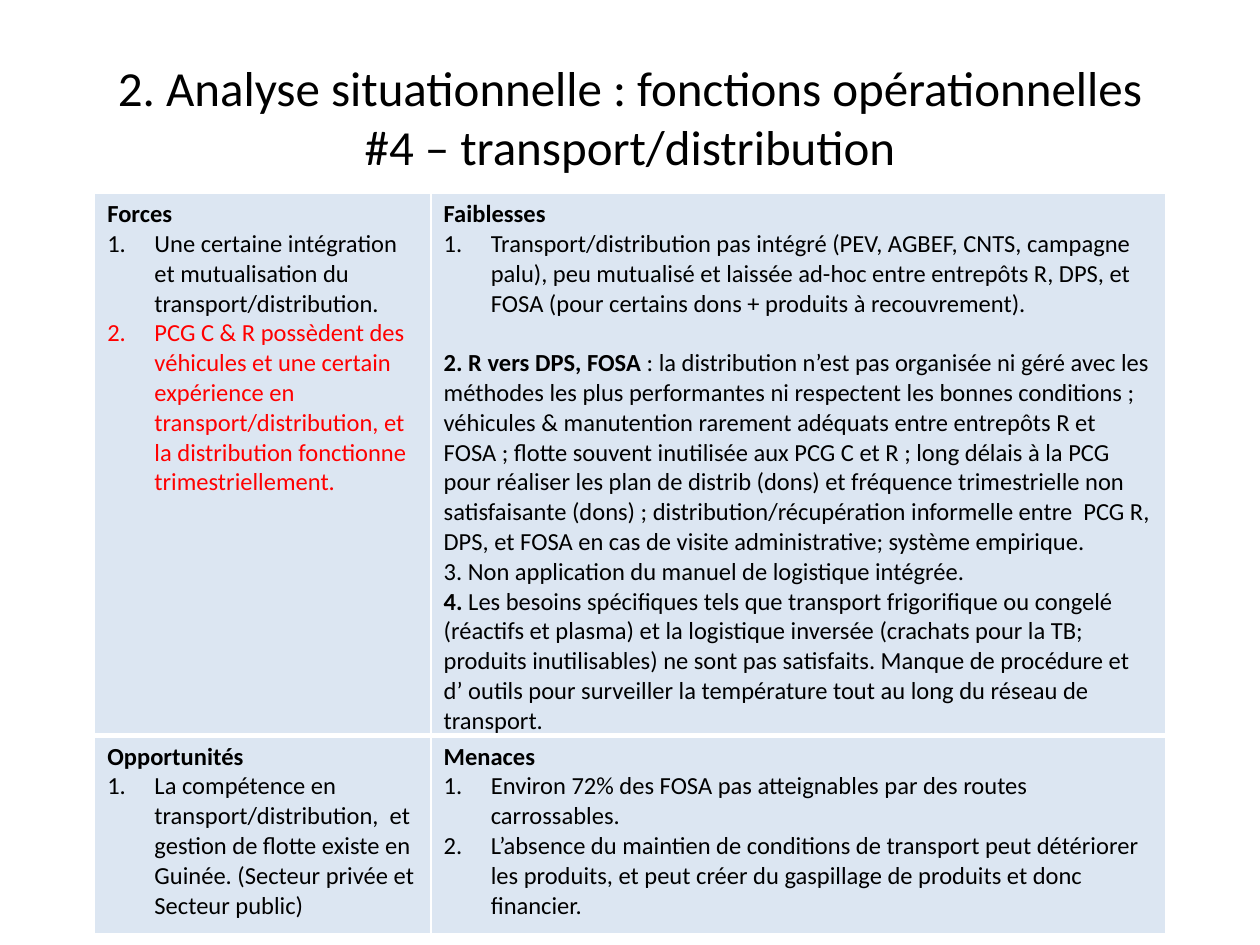
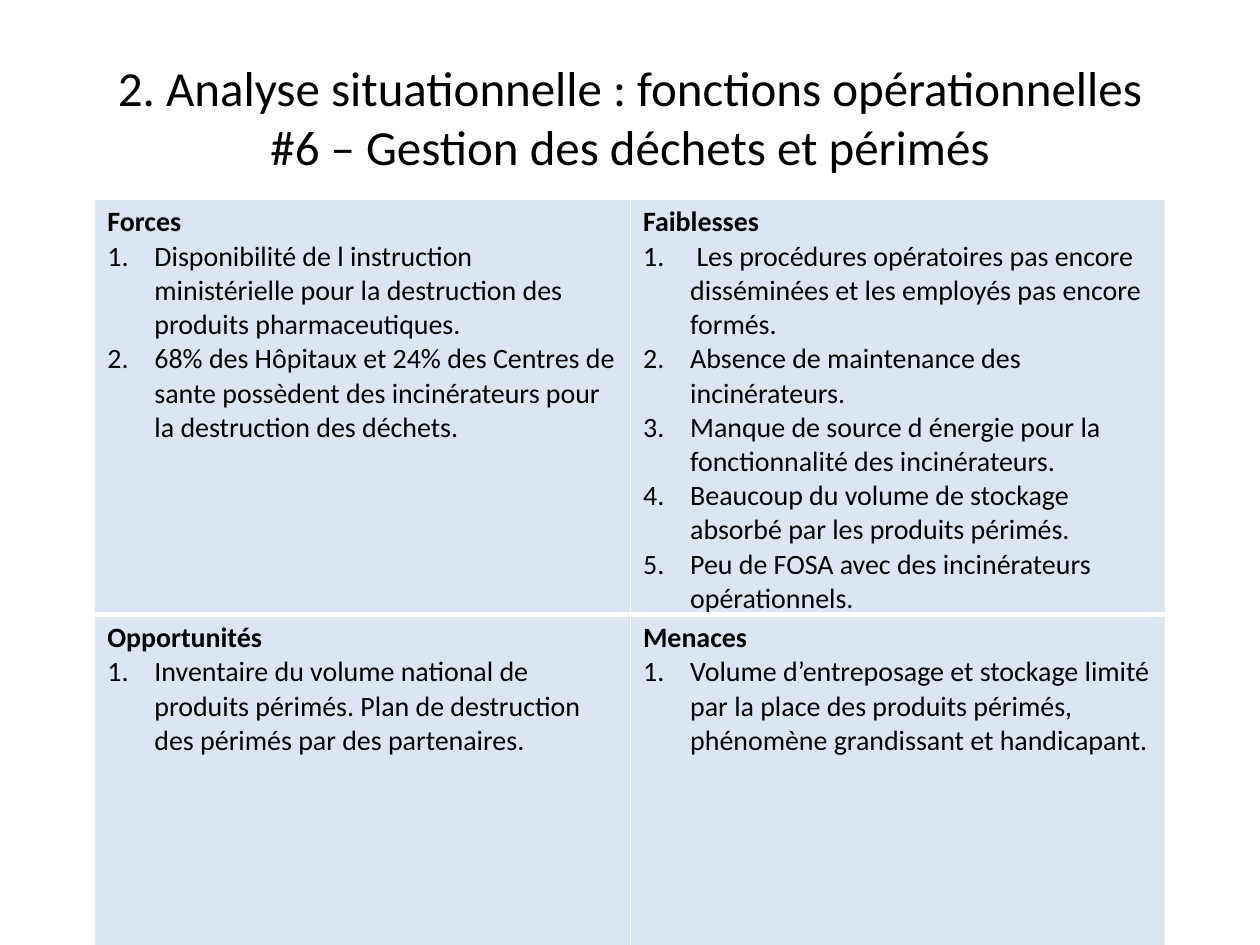
from dataclasses import dataclass

from lxml.etree import SubElement
from pptx import Presentation
from pptx.dml.color import RGBColor as Rgb
from pptx.enum.text import MSO_ANCHOR as Anchor, PP_ALIGN as Align
from pptx.oxml.ns import qn
from pptx.util import Cm, Pt


@dataclass(frozen=True)
class Theme:
    font: str = "Calibri"
    title: int = 28
    ink: str = "000000"
    alert: str = "FF0000"
    panel: str = "DCE6F2"
    rule: str = "FFFFFF"
    thin: int = 1
    thick: int = 3


@dataclass(frozen=True)
class Item:
    text: str
    lead: str = ""
    num: bool = True
    color: str = ""
    gap: float = 0


@dataclass(frozen=True)
class Panel:
    head: str
    items: list[Item]


@dataclass(frozen=True)
class Swot:
    topic: str
    top: float
    size: int
    cols: list[float]
    rows: list[float]
    panels: list[list[Panel]]


THEME = Theme()
PREFIX = "2. Analyse situationnelle : fonctions opérationnelles"
LEFT = 1.91
INDENT = Cm(0.95)

SWOTS = [
    Swot("#4 – transport/distribution", 3.89, 14, [6.78, 14.81], [9.12, 3.99], [
        [
            Panel("Forces", [
                Item("Une certaine intégration et mutualisation du transport/distribution."),
                Item("PCG C & R possèdent des  véhicules et une certain expérience en "
                     "transport/distribution, et la distribution fonctionne "
                     "trimestriellement.", color=THEME.alert),
            ]),
            Panel("Faiblesses", [
                Item("Transport/distribution pas intégré (PEV, AGBEF, CNTS, campagne palu), "
                     "peu mutualisé et laissée ad-hoc entre entrepôts R, DPS, et FOSA "
                     "(pour certains dons + produits à recouvrement)."),
                Item(": la distribution n’est pas organisée ni géré avec les méthodes les "
                     "plus performantes ni respectent les bonnes conditions ; véhicules & "
                     "manutention rarement adéquats entre entrepôts R et FOSA ; flotte "
                     "souvent inutilisée aux PCG C et R ; long délais à la PCG pour réaliser "
                     "les plan de distrib (dons) et fréquence trimestrielle non satisfaisante "
                     "(dons) ; distribution/récupération informelle entre  PCG R, DPS, et "
                     "FOSA en cas de visite administrative; système empirique.",
                     lead="2. R vers DPS, FOSA ", num=False, gap=17),
                Item("3. Non application du manuel de logistique intégrée.", num=False),
                Item("Les besoins spécifiques tels que transport frigorifique ou congelé "
                     "(réactifs et plasma) et la logistique inversée (crachats pour la TB; "
                     "produits inutilisables) ne sont pas satisfaits. Manque de procédure "
                     "et d’ outils pour surveiller la température tout au long du réseau "
                     "de transport.", lead="4. ", num=False),
            ]),
        ],
        [
            Panel("Opportunités", [
                Item("La compétence en transport/distribution,  et gestion de flotte existe "
                     "en Guinée. (Secteur privée et Secteur public)"),
            ]),
            Panel("Menaces", [
                Item("Environ 72% des FOSA pas atteignables par des routes carrossables."),
                Item("L’absence du maintien de conditions de transport peut détériorer les "
                     "produits, et peut créer du gaspillage de produits et donc financier."),
            ]),
        ],
    ]),
    Swot("#6 – Gestion des déchets et périmés", 4.01, 16, [10.8, 10.8], [6.88, 6.88], [
        [
            Panel("Forces", [
                Item("Disponibilité de l instruction ministérielle pour la destruction "
                     "des produits pharmaceutiques."),
                Item("68% des Hôpitaux et 24% des Centres de sante possèdent des "
                     "incinérateurs pour la destruction des déchets."),
            ]),
            Panel("Faiblesses", [
                Item(" Les procédures opératoires pas encore  disséminées et les employés "
                     "pas encore formés."),
                Item("Absence de maintenance des incinérateurs."),
                Item("Manque de source d énergie pour la fonctionnalité des incinérateurs."),
                Item("Beaucoup du volume de stockage absorbé par les produits périmés."),
                Item("Peu de FOSA avec des incinérateurs opérationnels."),
            ]),
        ],
        [
            Panel("Opportunités", [
                Item("Inventaire du volume national de produits périmés. Plan de "
                     "destruction des périmés par des partenaires."),
            ]),
            Panel("Menaces", [
                Item("Volume d’entreposage et stockage limité par la place des produits "
                     "périmés, phénomène grandissant et handicapant."),
            ]),
        ],
    ]),
]


def style(para, size: int, color: str = THEME.ink, bold: bool = False) -> None:
    font = para.font
    font.name, font.size, font.bold = THEME.font, Pt(size), bold
    font.color.rgb = Rgb.from_string(color)


def number(para) -> None:
    """Give the paragraph an automatic number and a hanging indent."""
    props = para._p.get_or_add_pPr()
    props.set("marL", str(INDENT))
    props.set("indent", str(-INDENT))
    SubElement(props, qn("a:buFont"), typeface="+mj-lt")
    SubElement(props, qn("a:buAutoNum"), type="arabicPeriod")


def edge(cell, widths: dict[str, int]) -> None:
    props = cell._tc.get_or_add_tcPr()
    for side, width in widths.items():
        line = SubElement(props, qn(f"a:ln{side}"), w=str(Pt(width)))
        fill = SubElement(line, qn("a:solidFill"))
        SubElement(fill, qn("a:srgbClr"), val=THEME.rule)


def write(cell, panel: Panel, size: int) -> None:
    frame = cell.text_frame
    head = frame.paragraphs[0]
    head.text = panel.head
    style(head, size, bold=True)
    for item in panel.items:
        para = frame.add_paragraph()
        if item.gap:
            para.space_before = Pt(item.gap)
        if item.num:
            number(para)
        if item.lead:
            lead = para.add_run()
            lead.text, lead.font.bold = item.lead, True
        para.add_run().text = item.text
        style(para, size, item.color or THEME.ink)
        # Runs in table cells carry their own font, as defRPr is not inherited.
        for run in para.runs:
            dress(run, size, item.color or THEME.ink)
    for run in head.runs:
        dress(run, size, THEME.ink, True)


def dress(run, size: int, color: str, bold: bool | None = None) -> None:
    font = run.font
    font.name, font.size = THEME.font, Pt(size)
    font.color.rgb = Rgb.from_string(color)
    if bold is not None:
        font.bold = bold


def add_title(slide, topic: str) -> None:
    box = slide.shapes.add_textbox(Cm(1.27), Cm(0.76), Cm(22.86), Cm(3.18))
    frame = box.text_frame
    frame.word_wrap, frame.vertical_anchor = True, Anchor.MIDDLE
    para = frame.paragraphs[0]
    para.text = f"{PREFIX}\v{topic}"
    para.alignment = Align.CENTER
    for run in para.runs:
        dress(run, THEME.title, THEME.ink)


def add_grid(slide, swot: Swot) -> None:
    table = slide.shapes.add_table(
        len(swot.rows), len(swot.cols), Cm(LEFT), Cm(swot.top),
        Cm(sum(swot.cols)), Cm(sum(swot.rows))).table
    table.first_row = table.horz_banding = False
    for col, width in zip(table.columns, swot.cols):
        col.width = Cm(width)
    for r, (row, height) in enumerate(zip(table.rows, swot.rows)):
        row.height = Cm(height)
        top, base = (THEME.thick, THEME.thin) if r else (THEME.thin, THEME.thick)
        for cell, panel in zip(row.cells, swot.panels[r]):
            edge(cell, {"L": THEME.thin, "R": THEME.thin, "T": top, "B": base})
            cell.fill.solid()
            cell.fill.fore_color.rgb = Rgb.from_string(THEME.panel)
            write(cell, panel, swot.size)


def main() -> None:
    deck = Presentation()
    deck.slide_width, deck.slide_height = Cm(25.4), Cm(19.05)
    for swot in SWOTS:
        slide = deck.slides.add_slide(deck.slide_layouts[6])
        add_title(slide, swot.topic)
        add_grid(slide, swot)
    deck.save("out.pptx")


if __name__ == "__main__":
    main()
